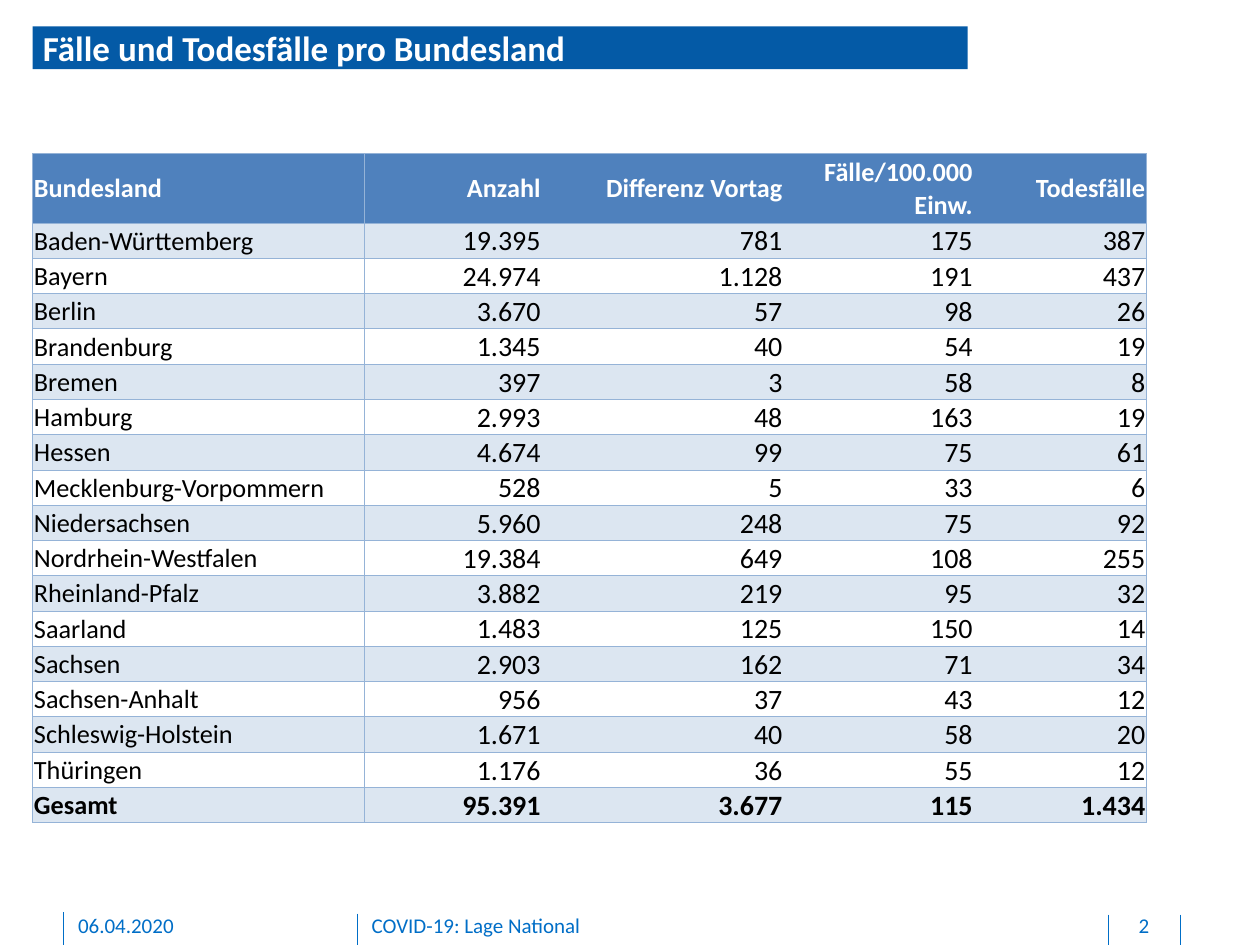
from pptx import Presentation
from pptx.dml.color import RGBColor
from pptx.enum.shapes import MSO_CONNECTOR, MSO_SHAPE
from pptx.enum.text import MSO_ANCHOR, PP_ALIGN
from pptx.oxml.ns import qn
from pptx.util import Inches, Pt
from lxml.etree import SubElement

FONT = "Calibri"
COLORS = {
    "title": "045AA6",
    "footer": "006EC7",
    "header": "4F81BD",
    "band": "DCE6F1",
    "border": "95B3D7",
    "white": "FFFFFF",
    "black": "000000",
}
HEADINGS = ("Bundesland", "Anzahl", "Differenz Vortag", "Fälle/100.000 Einw.", "Todesfälle")
STATES = [
    ("Baden-Württemberg", "19.395", "781", "175", "387"),
    ("Bayern", "24.974", "1.128", "191", "437"),
    ("Berlin", "3.670", "57", "98", "26"),
    ("Brandenburg", "1.345", "40", "54", "19"),
    ("Bremen", "397", "3", "58", "8"),
    ("Hamburg", "2.993", "48", "163", "19"),
    ("Hessen", "4.674", "99", "75", "61"),
    ("Mecklenburg-Vorpommern", "528", "5", "33", "6"),
    ("Niedersachsen", "5.960", "248", "75", "92"),
    ("Nordrhein-Westfalen", "19.384", "649", "108", "255"),
    ("Rheinland-Pfalz", "3.882", "219", "95", "32"),
    ("Saarland", "1.483", "125", "150", "14"),
    ("Sachsen", "2.903", "162", "71", "34"),
    ("Sachsen-Anhalt", "956", "37", "43", "12"),
    ("Schleswig-Holstein", "1.671", "40", "58", "20"),
    ("Thüringen", "1.176", "36", "55", "12"),
]
TOTAL = ("Gesamt", "95.391", "3.677", "115", "1.434")
COLUMN_WIDTHS = (2.63, 1.41, 1.92, 1.51, 1.37)
HEADER_HEIGHT, ROW_HEIGHT = 0.55, 0.28


def rgb(name):
    return RGBColor.from_string(COLORS[name])


def write(frame, text, size, color, bold=False, align=PP_ALIGN.LEFT):
    paragraph = frame.paragraphs[0]
    paragraph.alignment = align
    run = paragraph.add_run()
    run.text = text
    run.font.name = FONT
    run.font.size = Pt(size)
    run.font.bold = bold
    run.font.color.rgb = rgb(color)


def set_margins(target, left, top, right, bottom):
    target.margin_left, target.margin_top = Inches(left), Inches(top)
    target.margin_right, target.margin_bottom = Inches(right), Inches(bottom)


def add_title(slide, text):
    bar = slide.shapes.add_shape(
        MSO_SHAPE.RECTANGLE, Inches(0.26), Inches(0.21), Inches(7.42), Inches(0.34))
    bar.shadow.inherit = False
    bar.fill.solid()
    bar.fill.fore_color.rgb = rgb("title")
    bar.line.fill.background()
    frame = bar.text_frame
    frame.word_wrap = True
    frame.vertical_anchor = MSO_ANCHOR.MIDDLE
    set_margins(frame, 0.08, 0, 0, 0)
    write(frame, text, 20, "white", bold=True)


def add_footer_rule(slide, x, top):
    rule = slide.shapes.add_connector(
        MSO_CONNECTOR.STRAIGHT, Inches(x), Inches(top), Inches(x), Inches(7.5))
    rule.line.color.rgb = rgb("footer")
    rule.line.width = Pt(0.5)
    SubElement(rule._element.spPr, qn("a:effectLst"))


def add_footer_text(slide, text, left, width, align=PP_ALIGN.LEFT):
    box = slide.shapes.add_textbox(Inches(left), Inches(7.24), Inches(width), Inches(0.21))
    box.text_frame.word_wrap = True
    set_margins(box.text_frame, 0, 0, 0, 0.05)
    write(box.text_frame, text, 12, "footer", align=align)


def set_borders(cell, visible):
    """Draw the sides named in visible (L, R, T, B) and clear the rest; call before filling."""
    properties = cell._tc.get_or_add_tcPr()
    for side in "LRTB":
        line = SubElement(properties, qn(f"a:ln{side}"), w=str(Pt(0.5)))
        if side in visible:
            fill = SubElement(line, qn("a:solidFill"))
            SubElement(fill, qn("a:srgbClr"), val=COLORS["border"])
        else:
            SubElement(line, qn("a:noFill"))


def fill_cell(cell, text, row, column, last_row, last_column):
    is_header, is_label = row == 0, column == 0
    sides = "TB"
    if column <= 1:
        sides += "L"
    if column in (0, last_column):
        sides += "R"
    set_borders(cell, sides)
    if is_header or row % 2:
        cell.fill.solid()
        cell.fill.fore_color.rgb = rgb("header" if is_header else "band")
    else:
        cell.fill.background()
    cell.vertical_anchor = MSO_ANCHOR.MIDDLE
    set_margins(cell, 0.01, 0.01, 0.01, 0)
    write(cell.text_frame, text,
          size=15 if is_header or is_label else 16,
          color="white" if is_header else "black",
          bold=row in (0, last_row),
          align=PP_ALIGN.LEFT if is_label else PP_ALIGN.RIGHT)


def add_case_table(slide):
    rows = [HEADINGS, *STATES, TOTAL]
    heights = [HEADER_HEIGHT] + [ROW_HEIGHT] * (len(rows) - 1)
    table = slide.shapes.add_table(
        len(rows), len(HEADINGS), Inches(0.26), Inches(1.22),
        Inches(sum(COLUMN_WIDTHS)), Inches(sum(heights))).table
    for column, width in zip(table.columns, COLUMN_WIDTHS):
        column.width = Inches(width)
    for row, height in zip(table.rows, heights):
        row.height = Inches(height)
    for r, values in enumerate(rows):
        for c, value in enumerate(values):
            fill_cell(table.cell(r, c), value, r, c, len(rows) - 1, len(HEADINGS) - 1)


def main():
    deck = Presentation()
    deck.slide_width, deck.slide_height = Inches(10), Inches(7.5)
    slide = deck.slides.add_slide(deck.slide_layouts[6])

    for x, top in ((2.84, 7.25), (0.5, 7.24), (9.37, 7.26), (8.8, 7.26)):
        add_footer_rule(slide, x, top)
    add_footer_text(slide, "06.04.2020", 0.62, 2.03)
    add_footer_text(slide, "COVID-19: Lage National", 2.95, 5.67)
    add_footer_text(slide, "2", 8.81, 0.54, PP_ALIGN.CENTER)
    add_title(slide, "Fälle und Todesfälle pro Bundesland")
    add_case_table(slide)

    deck.save("out.pptx")


if __name__ == "__main__":
    main()
